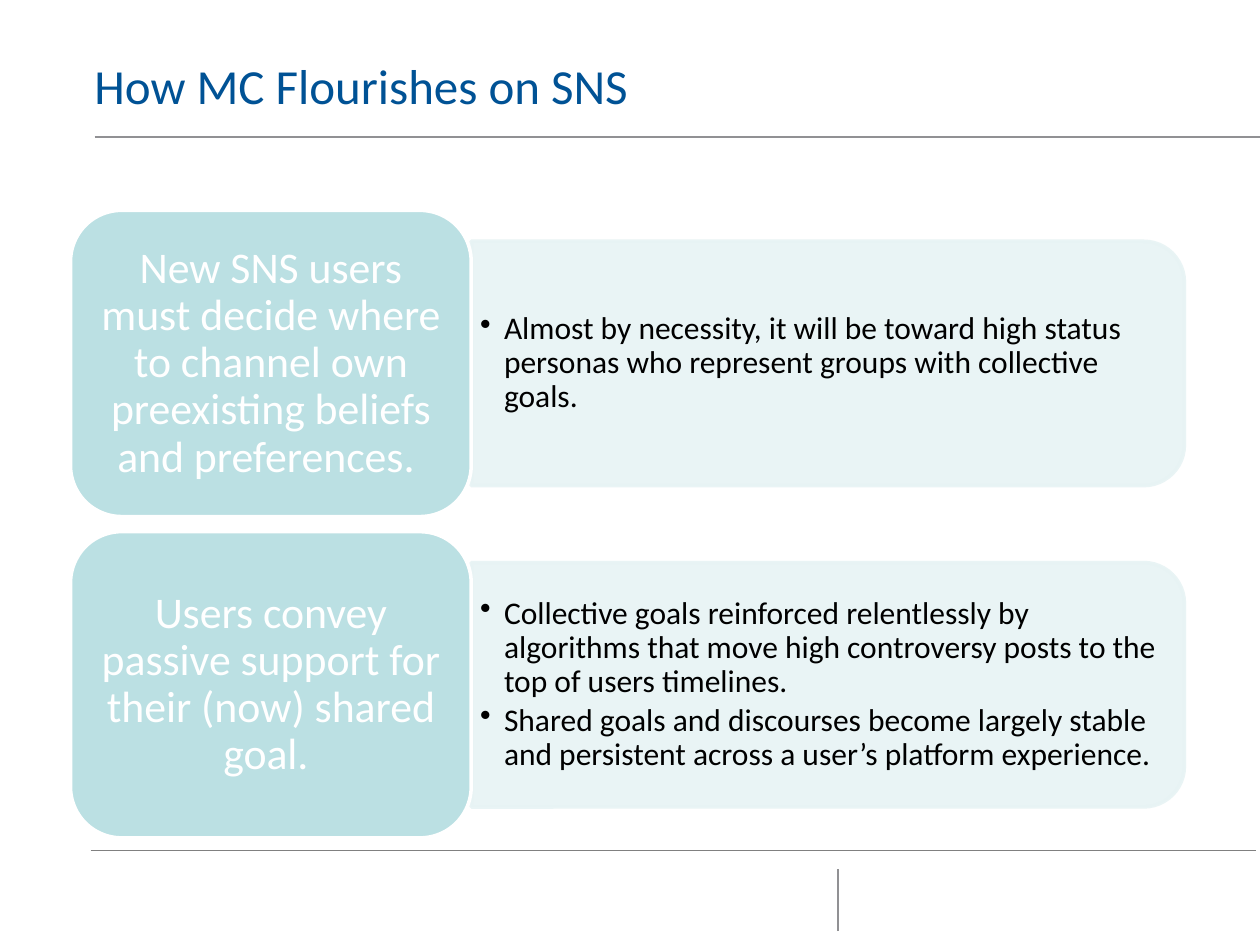
"""Build the slide on how MC flourishes on SNS."""
from dataclasses import dataclass

from lxml.etree import SubElement
from pptx import Presentation
from pptx.dml.color import RGBColor as Color
from pptx.enum.shapes import MSO_CONNECTOR as Connector, MSO_SHAPE as Preset
from pptx.enum.text import MSO_ANCHOR as Anchor, PP_ALIGN as Align
from pptx.oxml.ns import qn
from pptx.util import Inches, Pt


@dataclass(frozen=True)
class Theme:
    font: str = "Calibri"
    title: str = "005295"
    body: str = "000000"
    white: str = "FFFFFF"
    label: str = "BBE0E3"
    panel: str = "E7F3F4"
    rule: str = "919194"
    footer_rule: str = "808080"
    title_size: int = 28
    label_size: int = 25
    body_size: int = 18
    panel_opacity: int = 90


THEME = Theme()
WIDTH, HEIGHT = Inches(10), Inches(7.5)
COLUMNS, ROWS = 100, 75
LABEL_LEFT, LABEL_WIDTH, LABEL_HEIGHT = 5.6, 31.8, 24.3
PANEL_LEFT, PANEL_WIDTH, PANEL_HEIGHT = 37.4, 56.6, 19.4
FIRST_TOP, ROW_PITCH = 16.7, 25.5
BULLET_INDENT = Inches(0.19)

RULES = [
    ((7.2, 67.5), (99.7, 67.5), THEME.footer_rule),
    ((7.5, 10.9), (100, 10.9), THEME.rule),
    ((66.5, 73.9), (66.5, 69), THEME.rule),
]
POINTS = [
    ("New SNS users must decide where to channel own preexisting beliefs and preferences. ",
     ["Almost by necessity, it will be toward high status personas who represent "
      "groups with collective goals."]),
    ("Users convey passive support for their (now) shared goal. ",
     ["Collective goals reinforced relentlessly by algorithms that move high controversy "
      "posts to the top of users timelines.",
      "Shared goals and discourses become largely stable and persistent across a "
      "user’s platform experience."]),
]


def across(columns):
    return round(WIDTH * columns / COLUMNS)


def down(rows):
    return round(HEIGHT * rows / ROWS)


def frame(left, top, width, height):
    return across(left), down(top), across(width), down(height)


def add_bullet(paragraph):
    properties = paragraph._p.get_or_add_pPr()
    properties.set("marL", str(BULLET_INDENT))
    properties.set("indent", str(-BULLET_INDENT))
    SubElement(properties, qn("a:buChar"), char="•")


def write_text(shape, texts, *, size, color, insets=(0, 0), anchor=Anchor.TOP,
               align=Align.LEFT, spacing=0.9, after=0, bullet=False):
    text_frame = shape.text_frame
    text_frame.word_wrap = True
    text_frame.vertical_anchor = anchor
    text_frame.margin_left = text_frame.margin_right = Inches(insets[0])
    text_frame.margin_top = text_frame.margin_bottom = Inches(insets[1])
    for index, text in enumerate(texts):
        paragraph = text_frame.add_paragraph() if index else text_frame.paragraphs[0]
        if bullet:
            add_bullet(paragraph)
        paragraph.alignment = align
        paragraph.line_spacing = spacing
        paragraph.space_after = Pt(after)
        run = paragraph.add_run()
        run.text = text
        run.font.name = THEME.font
        run.font.size = Pt(size)
        run.font.color.rgb = Color.from_string(color)


def add_rule(slide, start, end, color):
    rule = slide.shapes.add_connector(
        Connector.STRAIGHT, across(start[0]), down(start[1]), across(end[0]), down(end[1]))
    rule.line.color.rgb = Color.from_string(color)
    rule.line.width = Pt(1)
    SubElement(rule._element.spPr, qn("a:effectLst"))


def add_box(slide, preset, place, fill, line):
    box = slide.shapes.add_shape(preset, *frame(*place))
    box.shadow.inherit = False
    box.fill.solid()
    box.fill.fore_color.rgb = Color.from_string(fill)
    box.line.color.rgb = Color.from_string(line)
    box.line.width = Pt(2)
    return box


def set_opacity(shape, percent):
    for color in shape._element.spPr.iter(qn("a:srgbClr")):
        SubElement(color, qn("a:alpha"), val=str(percent * 1000))


def add_title(slide, text):
    title = slide.shapes.add_textbox(*frame(7.5, 4.6, 86.3, 10.4))
    write_text(title, [text], size=THEME.title_size, color=THEME.title, spacing=Pt(32))


def add_panel(slide, middle, bullets):
    turned_left = PANEL_LEFT + (PANEL_WIDTH - PANEL_HEIGHT) / 2
    place = (turned_left, middle - PANEL_WIDTH / 2, PANEL_HEIGHT, PANEL_WIDTH)
    panel = add_box(slide, Preset.ROUND_2_SAME_RECTANGLE, place, THEME.panel, THEME.panel)
    panel.rotation = 90
    set_opacity(panel, THEME.panel_opacity)
    text_height = PANEL_HEIGHT - 1.9
    body = slide.shapes.add_textbox(
        *frame(PANEL_LEFT, middle - text_height / 2, PANEL_WIDTH - 0.9, text_height))
    write_text(body, bullets, size=THEME.body_size, color=THEME.body, insets=(0.07, 0.04),
               anchor=Anchor.MIDDLE, after=2.7, bullet=True)


def add_label(slide, top, text):
    place = (LABEL_LEFT, top, LABEL_WIDTH, LABEL_HEIGHT)
    label = add_box(slide, Preset.ROUNDED_RECTANGLE, place, THEME.label, THEME.white)
    write_text(label, [text], size=THEME.label_size, color=THEME.white, insets=(0.1, 0.05),
               anchor=Anchor.MIDDLE, align=Align.CENTER, after=8.75)


def main():
    presentation = Presentation()
    presentation.slide_width, presentation.slide_height = WIDTH, HEIGHT
    slide = presentation.slides.add_slide(presentation.slide_layouts[6])
    for start, end, color in RULES:
        add_rule(slide, start, end, color)
    add_title(slide, "How MC Flourishes on SNS")
    for index, (label, bullets) in enumerate(POINTS):
        top = FIRST_TOP + index * ROW_PITCH
        add_panel(slide, top + LABEL_HEIGHT / 2, bullets)
        add_label(slide, top, label)
    presentation.save("out.pptx")


if __name__ == "__main__":
    main()
